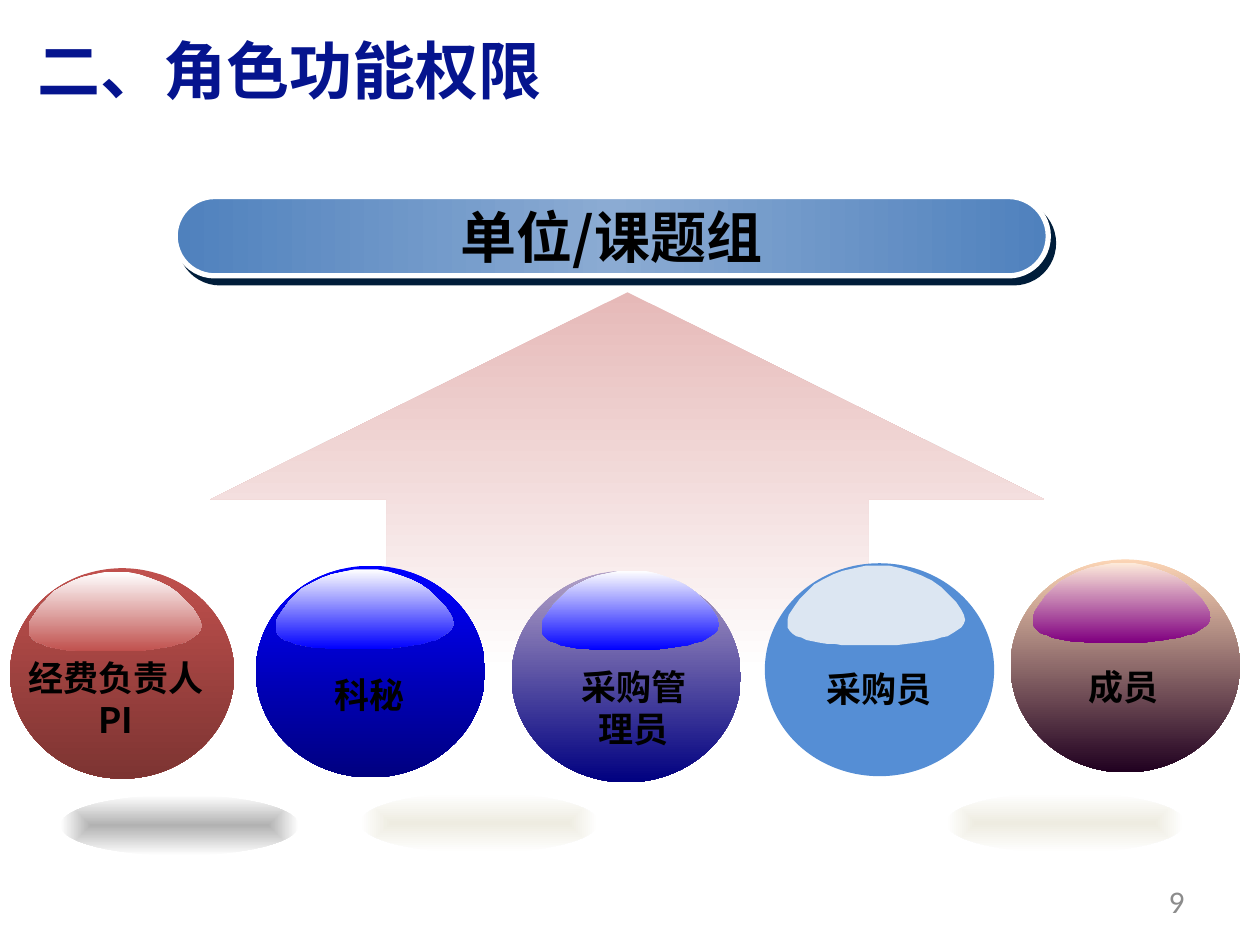
from lxml.etree import SubElement
from pptx import Presentation
from pptx.dml.color import RGBColor
from pptx.enum.shapes import MSO_SHAPE
from pptx.enum.text import MSO_ANCHOR, PP_ALIGN
from pptx.oxml.ns import qn
from pptx.util import Inches, Pt

COLORS = {
    "title": "05148E", "text": "000000", "number": "8C8C8C", "white": "FFFFFF",
    "pink": "E6B9B8", "steel": "4F81BD", "steel light": "8BABD3", "navy": "001D3A",
    "red": "C0504D", "dark red": "7D3432", "blue": "0000FF", "dark blue": "000080",
    "lilac": "B3A2C7", "sky": "558ED5", "pale sky": "DCE6F2", "peach": "FCD5B5",
    "cream": "FDEADA", "purple": "800080", "dark purple": "200020",
    "gray": "B2B2B2", "sand": "EEECE1",
}
CJK = "Noto Sans CJK SC"


def paint(shape, names, angle=90, radial=False):
    """Fill a shape with evenly spaced gradient stops and no outline."""
    shape.shadow.inherit = False
    shape.line.fill.background()
    if len(set(names)) == 1:
        shape.fill.solid()
        shape.fill.fore_color.rgb = RGBColor.from_string(COLORS[names[0]])
        return
    shape.fill.gradient()
    gradient = shape._element.spPr.find(qn("a:gradFill"))
    for child in list(gradient):
        gradient.remove(child)
    stops = SubElement(gradient, qn("a:gsLst"))
    for index, name in enumerate(names):
        stop = SubElement(stops, qn("a:gs"), pos=str(100000 * index // (len(names) - 1)))
        SubElement(stop, qn("a:srgbClr"), val=COLORS[name])
    if radial:
        center = SubElement(gradient, qn("a:path"), path="shape")
        SubElement(center, qn("a:fillToRect"), l="50000", t="50000", r="50000", b="50000")
    else:
        SubElement(gradient, qn("a:lin"), ang=str(angle * 60000), scaled="0")


def write(shape, text, size, color="text", align=PP_ALIGN.CENTER, font=CJK, wrap=False,
          anchor=MSO_ANCHOR.MIDDLE):
    frame = shape.text_frame
    frame.text = text
    frame.word_wrap = wrap
    frame.vertical_anchor = anchor
    for paragraph in frame.paragraphs:
        paragraph.alignment = align
        for run in paragraph.runs:
            run.font.size = Pt(size)
            run.font.bold = font == CJK
            run.font.color.rgb = RGBColor.from_string(COLORS[color])
            run.font.name = font
            SubElement(run._r.rPr, qn("a:ea"), typeface=font)


presentation = Presentation()
presentation.slide_width, presentation.slide_height = Inches(10), Inches(7.5)
CELL = presentation.slide_width // 1000  # the slide is a grid of 1000 by 750 cells
slide = presentation.slides.add_slide(presentation.slide_layouts[5])
shapes = slide.shapes

# Title
title = shapes.title
title.left, title.top, title.width, title.height = [n * CELL for n in (20, 31, 558, 55)]
write(title, "二、角色功能权限", 36, "title", PP_ALIGN.LEFT, wrap=True)
title.text_frame.paragraphs[0].line_spacing = 0.9

# Arrow rising to the banner
arrow = shapes.add_shape(MSO_SHAPE.UP_ARROW, *[n * CELL for n in (167, 232, 662, 302)])
arrow.adjustments[0], arrow.adjustments[1] = 0.578, 0.544
paint(arrow, ["pink", "white"])

# Banner with a hard offset shadow
banner = shapes.add_shape(MSO_SHAPE.ROUNDED_RECTANGLE, *[n * CELL for n in (139, 156, 693, 63)])
banner.adjustments[0] = 0.5
paint(banner, ["steel", "steel light", "steel"], angle=0)
banner.line.color.rgb = RGBColor.from_string(COLORS["white"])
banner.line.width = Pt(3)
effects = banner._element.spPr.find(qn("a:effectLst"))
shadow = SubElement(effects, qn("a:outerShdw"), blurRad="0", dist=str(Pt(5)),
                    dir=str(53 * 60000), algn="ctr", rotWithShape="0")
SubElement(shadow, qn("a:srgbClr"), val=COLORS["navy"])
write(banner, "单位/课题组", 32)

# Soft floor shadows
for left, top, color in [(48, 631, "gray"), (286, 629, "sand"), (751, 629, "sand")]:
    floor = shapes.add_shape(MSO_SHAPE.OVAL, *[n * CELL for n in (left, top, 189, 48)])
    paint(floor, [color, "white"], radial=True)

# Outline of the highlight, in cells, 141 wide and 63 high
GLOSS = [
    (138, 35), (140, 39), (141, 43), (140, 46), (138, 49), (135, 51), (132, 53),
    (127, 56), (122, 57), (116, 59), (109, 60), (103, 61), (95, 62), (87, 63),
    (50, 63), (43, 63), (37, 62), (31, 62), (25, 61), (20, 60), (15, 59), (11, 57),
    (7, 56), (4, 54), (2, 52), (0, 49), (0, 43), (1, 39), (5, 33), (10, 26), (15, 21),
    (21, 15), (28, 11), (36, 7), (44, 4), (53, 2), (62, 0), (81, 0), (90, 2), (99, 5),
    (107, 8), (115, 12), (122, 17), (128, 23), (134, 29),
]

# Role balls: label, ball box, ball colours, highlight corner and width,
# highlight colours, label box
roles = [
    ("经费负责人\nPI", (8, 451, 178, 167), ["red", "dark red"],
     (23, 454, 137), ["white", "red"], (12, 516, 160, 77)),
    ("科秘", (203, 449, 182, 168), ["blue", "dark blue"],
     (219, 452, 141), ["white", "blue"], (227, 530, 133, 44)),
    ("采购管理员", (406, 453, 182, 168), ["lilac", "dark blue"],
     (430, 453, 141), ["white", "blue"], (443, 523, 120, 77)),
    ("采购员", (607, 447, 182, 169), ["sky", "sky"],
     (625, 449, 141), ["pale sky", "pale sky"], (645, 525, 105, 44)),
    ("成员", (802, 444, 182, 169), ["peach", "dark purple"],
     (820, 447, 141), ["cream", "purple"], (853, 523, 77, 44)),
]
for name, ball_box, ball_colors, (left, top, width), gloss_colors, label_box in roles:
    ball = shapes.add_shape(MSO_SHAPE.OVAL, *[n * CELL for n in ball_box])
    paint(ball, ball_colors)

    points = [((left + x * width / 141) * CELL, (top + y) * CELL) for x, y in GLOSS]
    builder = shapes.build_freeform(*points[0])
    builder.add_line_segments(points[1:], close=True)
    paint(builder.convert_to_shape(), gloss_colors)

    label = shapes.add_textbox(*[n * CELL for n in label_box])
    write(label, name, 20, wrap=name == "采购管理员", anchor=MSO_ANCHOR.TOP)

# Page number
number = shapes.add_textbox(*[n * CELL for n in (717, 695, 233, 40)])
write(number, "9", 18, "number", PP_ALIGN.RIGHT, "Calibri", wrap=True)

presentation.save("out.pptx")
